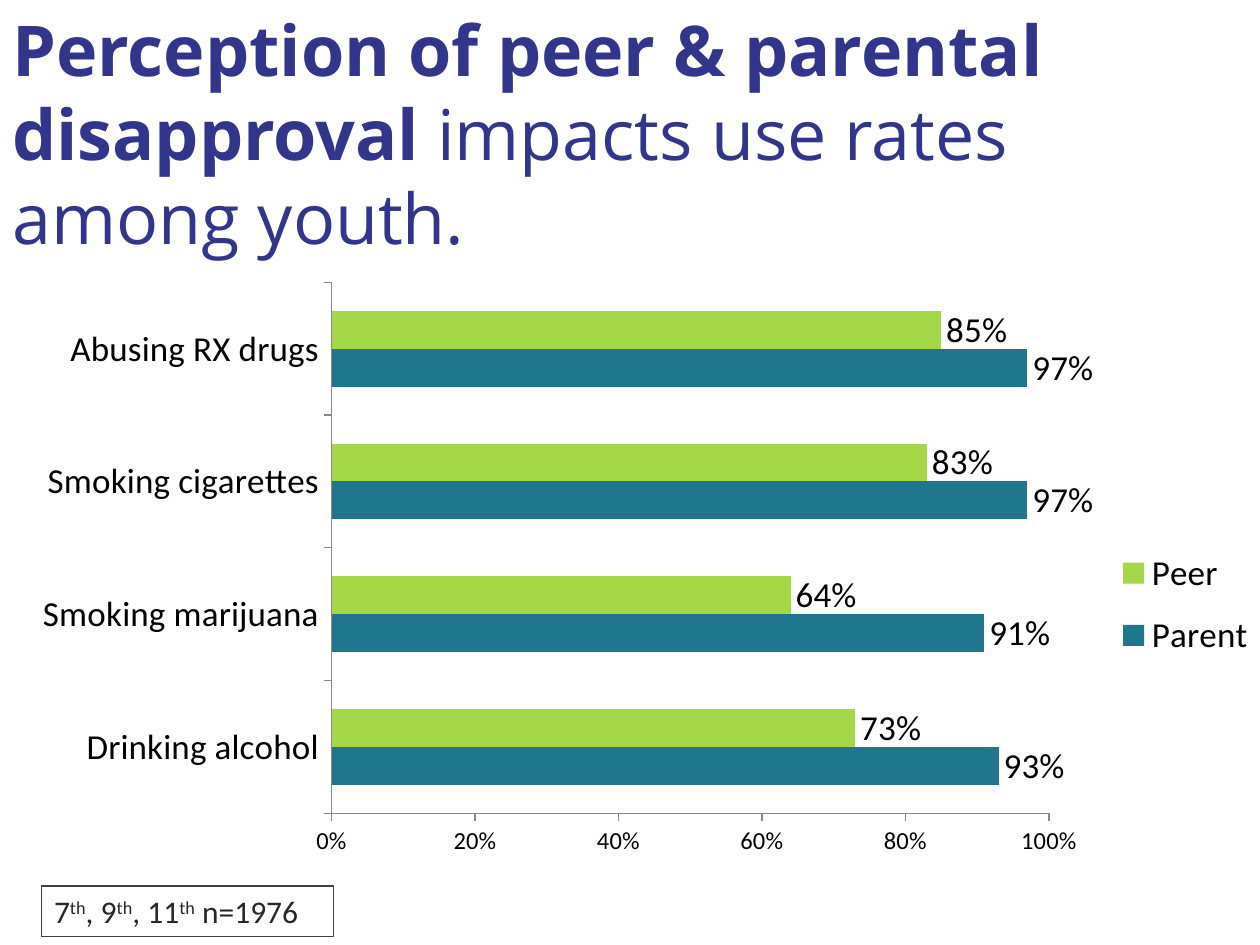
from dataclasses import dataclass
from typing import Any

from lxml.etree import SubElement
from pptx import Presentation
from pptx.chart.data import CategoryChartData
from pptx.dml.color import RGBColor
from pptx.enum.chart import XL_CHART_TYPE, XL_LABEL_POSITION, XL_LEGEND_POSITION, XL_TICK_MARK
from pptx.enum.text import MSO_ANCHOR, PP_ALIGN
from pptx.oxml.ns import qn
from pptx.util import Cm, Pt


@dataclass(frozen=True)
class Box:
    left: float
    top: float
    width: float
    height: float

    def lengths(self) -> tuple:
        return Cm(self.left), Cm(self.top), Cm(self.width), Cm(self.height)


@dataclass(frozen=True)
class Span:
    text: str
    bold: bool = False
    superscript: bool = False


@dataclass(frozen=True)
class Approval:
    group: str
    color: str
    rates: tuple


TOPICS = ("Drinking alcohol", "Smoking marijuana", "Smoking cigarettes", "Abusing RX drugs")
APPROVALS = (
    Approval("Parent", "20768C", (0.93, 0.91, 0.97, 0.97)),
    Approval("Peer", "A5D848", (0.73, 0.64, 0.83, 0.85)),
)
TITLE = (
    Span("Perception of peer & parental disapproval ", bold=True),
    Span("impacts use rates among youth."),
)
SAMPLE = (
    Span("7"), Span("th", superscript=True),
    Span(", 9"), Span("th", superscript=True),
    Span(", 11"), Span("th", superscript=True),
    Span(" n=1976"),
)


def color(value: str) -> RGBColor:
    return RGBColor.from_string(value)


def apply(target: Any, values: dict) -> None:
    for name, value in values.items():
        setattr(target, name, value)


def style_font(font: Any, name: str, size: int, shade: str, bold: bool = False) -> None:
    apply(font, {"name": name, "size": Pt(size), "bold": bold})
    font.color.rgb = color(shade)


def add_text(slide: Any, box: Box, spans: tuple, name: str, size: int, shade: str) -> Any:
    shape = slide.shapes.add_textbox(*box.lengths())
    apply(shape.text_frame, {"word_wrap": True, "vertical_anchor": MSO_ANCHOR.TOP})
    paragraph = shape.text_frame.paragraphs[0]
    paragraph.alignment = PP_ALIGN.LEFT
    for span in spans:
        run = paragraph.add_run()
        run.text = span.text
        style_font(run.font, name, size, shade, span.bold)
        if span.superscript:
            run.font._element.set("baseline", "30000")
    return shape


def place(element: Any, box: Box, inner: bool = False) -> None:
    layout = element.get_or_add_layout() if hasattr(element, "get_or_add_layout") else element.find(qn("c:layout"))
    if layout is None:
        layout = SubElement(element, qn("c:layout"))
        element.insert(0, layout)
    manual = SubElement(layout, qn("c:manualLayout"))
    settings = {"layoutTarget": "inner"} if inner else {}
    settings |= {"xMode": "edge", "yMode": "edge", "x": box.left, "y": box.top, "w": box.width, "h": box.height}
    for name, value in settings.items():
        SubElement(manual, qn(f"c:{name}")).set("val", str(value))


def style_axis(axis: Any, size: int, values: dict) -> None:
    apply(axis, {"has_major_gridlines": False, "major_tick_mark": XL_TICK_MARK.OUTSIDE,
                 "minor_tick_mark": XL_TICK_MARK.NONE} | values)
    style_font(axis.tick_labels.font, "Calibri", size, "000000")
    axis.format.line.color.rgb = color("888888")
    axis.format.line.width = Pt(0.75)


def add_approval_chart(slide: Any, box: Box) -> None:
    data = CategoryChartData(number_format="0%")
    data.categories = TOPICS
    for approval in APPROVALS:
        data.add_series(approval.group, approval.rates)
    chart = slide.shapes.add_chart(XL_CHART_TYPE.BAR_CLUSTERED, *box.lengths(), data).chart
    style_font(chart.font, "Calibri", 10, "000000")
    apply(chart, {"has_title": False, "has_legend": True})
    apply(chart.legend, {"position": XL_LEGEND_POSITION.RIGHT, "include_in_layout": False})
    style_font(chart.legend.font, "Calibri", 20, "000000")
    style_axis(chart.category_axis, 20, {})
    style_axis(chart.value_axis, 14, {"minimum_scale": 0, "maximum_scale": 1, "major_unit": 0.2})
    apply(chart.value_axis.tick_labels, {"number_format": "0%", "number_format_is_linked": False})

    plot = chart.plots[0]
    apply(plot, {"gap_width": 150, "overlap": 0, "vary_by_categories": False})
    for series, approval in zip(plot.series, APPROVALS):
        series.format.fill.solid()
        series.format.fill.fore_color.rgb = color(approval.color)
        labels = series.data_labels
        apply(labels, {"show_value": True, "position": XL_LABEL_POSITION.OUTSIDE_END,
                       "number_format": "0%", "number_format_is_linked": False})
        style_font(labels.font, "Calibri", 20, "000000")

    chart_element = chart._chartSpace.chart
    place(chart_element.plotArea, Box(0.252, 0.021, 0.578, 0.889), inner=True)
    legend = chart.legend._element
    layout = legend.find(qn("c:layout"))
    if layout is None:
        layout = SubElement(legend, qn("c:layout"))
        legend.find(qn("c:legendPos")).addnext(layout)
    place(legend, Box(0.88, 0.44, 0.12, 0.24))


def main() -> None:
    presentation = Presentation()
    apply(presentation, {"slide_width": Cm(25.4), "slide_height": Cm(19.05)})
    slide = presentation.slides.add_slide(presentation.slide_layouts[6])
    add_approval_chart(slide, Box(0.38, 5.44, 25.02, 12.04))
    sample = add_text(slide, Box(0.84, 17.86, 5.89, 1.02), SAMPLE, "Calibri", 18, "262626")
    sample.line.color.rgb = color("404040")
    sample.line.width = Pt(0.75)
    add_text(slide, Box(0, 0, 21.49, 5.38), TITLE, "Open Sans", 40, "31358C")
    presentation.save("out.pptx")


if __name__ == "__main__":
    main()
